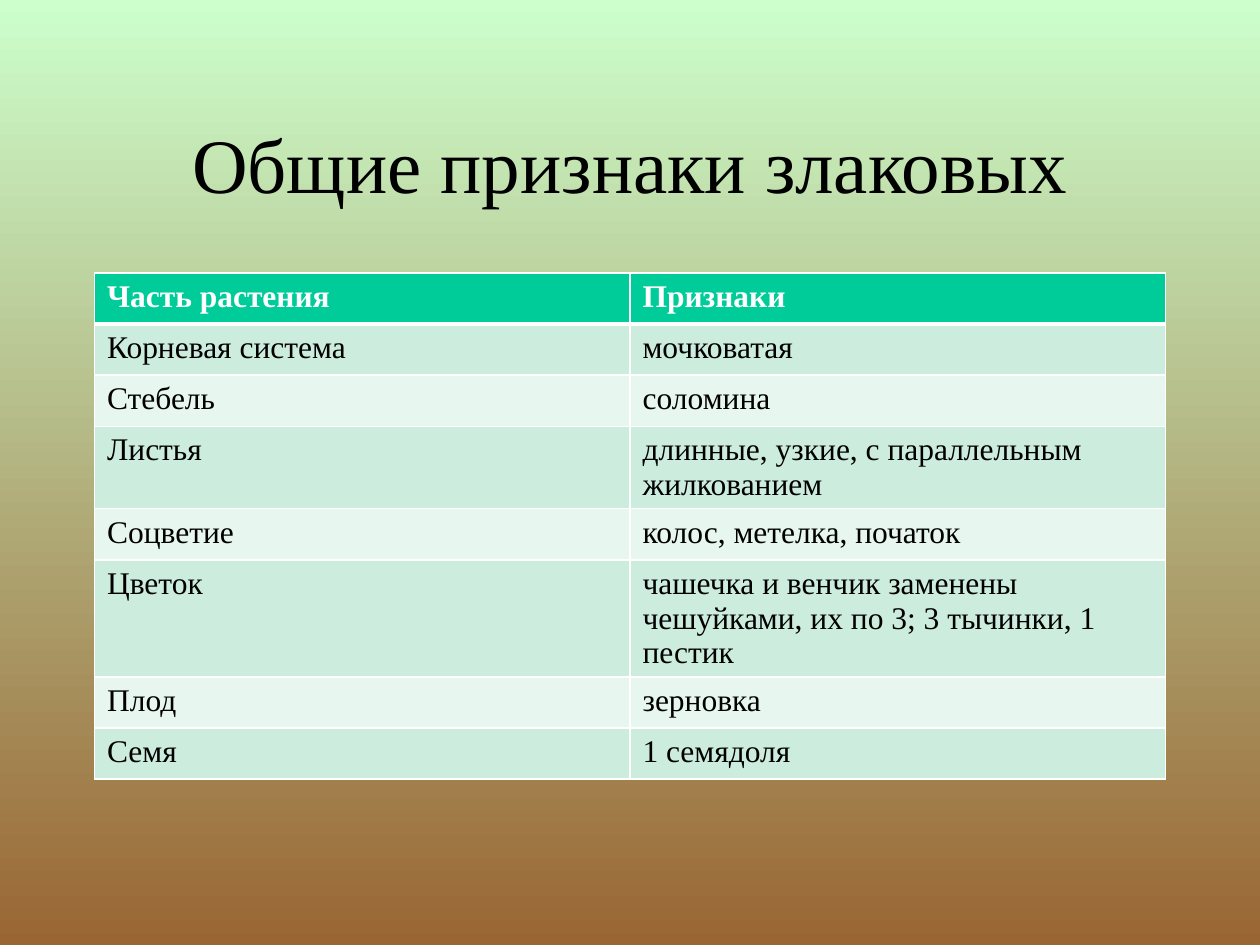
from lxml.etree import SubElement
from pptx import Presentation
from pptx.dml.color import RGBColor
from pptx.enum.text import MSO_ANCHOR, PP_ALIGN
from pptx.oxml.ns import qn
from pptx.util import Pt

FONT = "Times New Roman"
ROWS = [
    ("Часть растения", "Признаки"),
    ("Корневая система", "мочковатая"),
    ("Стебель", "соломина"),
    ("Листья", "длинные, узкие, с параллельным жилкованием"),
    ("Соцветие", "колос, метелка, початок"),
    ("Цветок", "чашечка и венчик заменены чешуйками, их по 3; 3 тычинки, 1 пестик"),
    ("Плод", "зерновка"),
    ("Семя", "1 семядоля"),
]


def rgb(color):
    return RGBColor.from_string(color)


def add_run(p, text, size, color, bold=False):
    r = p.add_run()
    r.text = text
    r.font.name = FONT
    r.font.size = Pt(size)
    r.font.bold = bold
    r.font.color.rgb = rgb(color)


def set_background(s, top, bottom):
    fill = s.background.fill
    fill.gradient()
    fill.gradient_angle = 270
    for stop, position, color in zip(fill.gradient_stops, (0, 1), (top, bottom)):
        stop.position = position
        stop.color.rgb = rgb(color)


def set_borders(cell, color, bottom):
    """Draw 1 pt lines round a cell, with its own width for the bottom one."""
    tcPr = cell._tc.get_or_add_tcPr()
    for side, width in (("L", 1), ("R", 1), ("T", 1), ("B", bottom)):
        ln = SubElement(tcPr, qn(f"a:ln{side}"), w=str(Pt(width)))
        SubElement(SubElement(ln, qn("a:solidFill")), qn("a:srgbClr"), val=color)


def place_title(s, text, x, y, w, h):
    sp = s.shapes.title
    sp.left, sp.top, sp.width, sp.height = Pt(x), Pt(y), Pt(w), Pt(h)
    tf = sp.text_frame
    tf.word_wrap = True
    tf.vertical_anchor = MSO_ANCHOR.MIDDLE
    p = tf.paragraphs[0]
    p.alignment = PP_ALIGN.CENTER
    add_run(p, text, 44, "000000")


def place_table(s, rows, x, y, w, row_h):
    table = s.shapes.add_table(len(rows), len(rows[0]), Pt(x), Pt(y),
                               Pt(w), Pt(row_h * len(rows))).table
    for i, texts in enumerate(rows):
        table.rows[i].height = Pt(row_h)
        header = i == 0
        fill = "00CC99" if header else ("E7F6EF", "CCECDE")[i % 2]
        for j, text in enumerate(texts):
            cell = table.cell(i, j)
            # The line under the header belongs to both rows it divides
            set_borders(cell, "FFFFFF", 3 if header else 1)
            if i == 1:
                cell._tc.tcPr.find(qn("a:lnT")).set("w", str(Pt(3)))
            cell.fill.solid()
            cell.fill.fore_color.rgb = rgb(fill)
            add_run(cell.text_frame.paragraphs[0], text, 18,
                    "FFFFFF" if header else "000000", header)


def main():
    prs = Presentation()
    prs.slide_width, prs.slide_height = Pt(720), Pt(540)
    s = prs.slides.add_slide(prs.slide_layouts[5])
    set_background(s, "CCFFCC", "996633")
    place_title(s, "Общие признаки злаковых", 54, 48, 612, 90)
    place_table(s, ROWS, 54, 156, 612, 29.2)
    prs.save("out.pptx")


if __name__ == "__main__":
    main()
